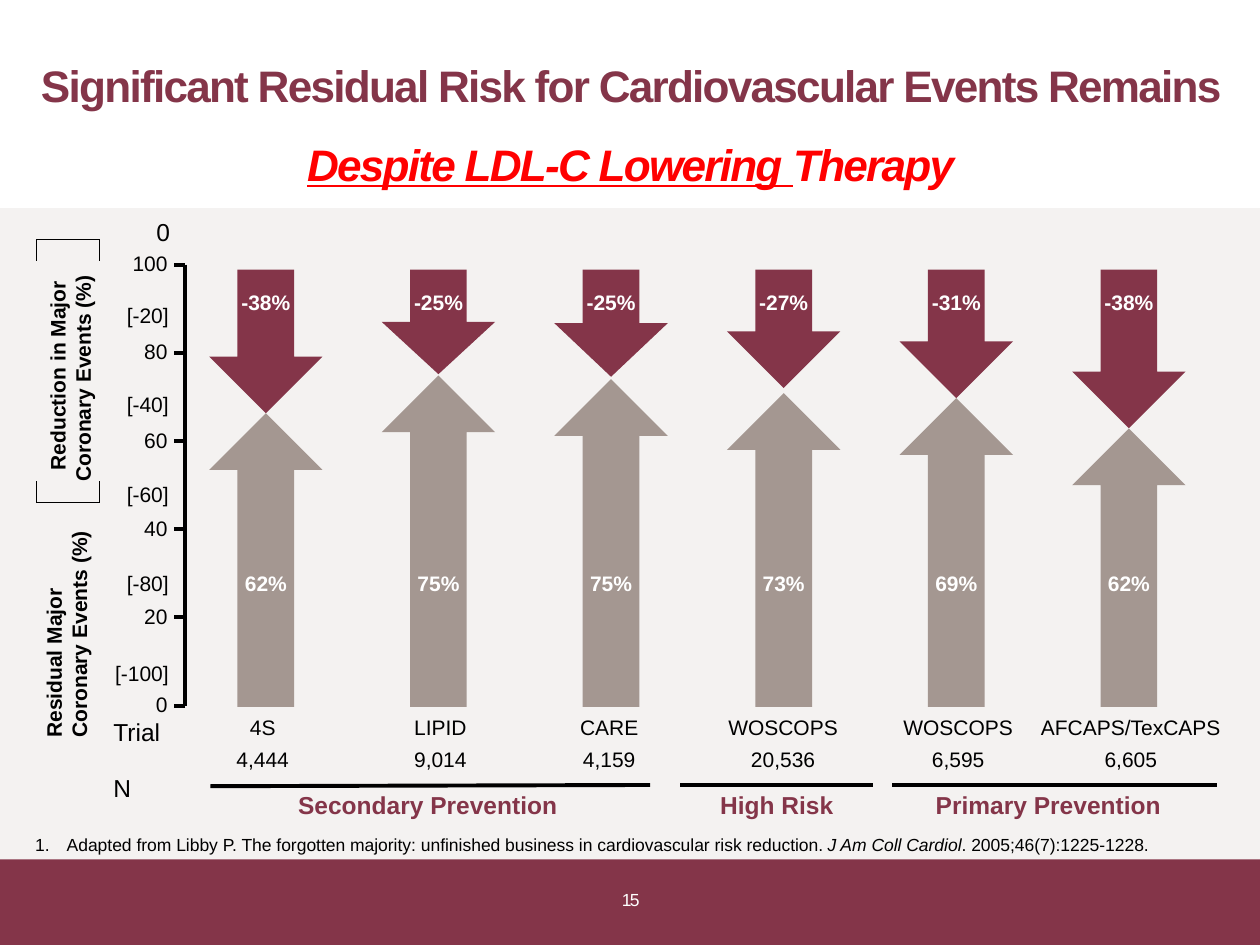
from lxml import etree
from pptx import Presentation
from pptx.dml.color import RGBColor
from pptx.enum import shapes, text
from pptx.oxml.ns import qn
from pptx.util import Inches, Pt

WINE = RGBColor(0x84, 0x35, 0x49)
TAUPE = RGBColor(0xA4, 0x97, 0x91)
PAPER = RGBColor(0xF4, 0xF2, 0xF1)
RED = RGBColor(0xFF, 0, 0)
WHITE = RGBColor(0xFF, 0xFF, 0xFF)
BLACK = RGBColor(0, 0, 0)
LEFT, CENTER, RIGHT = text.PP_ALIGN.LEFT, text.PP_ALIGN.CENTER, text.PP_ALIGN.RIGHT
TOP, MIDDLE, BOTTOM = text.MSO_ANCHOR.TOP, text.MSO_ANCHOR.MIDDLE, text.MSO_ANCHOR.BOTTOM

# Content
TITLE = [("Significant Residual Risk for Cardiovascular Events Remains ", WINE, False),
         ("Despite LDL-C Lowering ", RED, True),
         ("Therapy", RED, False)]
# trial, N, reduction, residual, down arrow height, up arrow top, label centre
TRIALS = [
    ("4S", "4,444", "-38%", "62%", 1.14, 3.28, 2.08),
    ("LIPID", "9,014", "-25%", "75%", 0.83, 2.98, 3.49),
    ("CARE", "4,159", "-25%", "75%", 0.85, 3.01, 4.83),
    ("WOSCOPS", "20,536", "-27%", "73%", 0.94, 3.12, 6.21),
    ("WOSCOPS", "6,595", "-31%", "69%", 1.02, 3.16, 7.6),
    ("AFCAPS/TexCAPS", "6,605", "-38%", "62%", 1.26, 3.4, 8.97),
]
# name, text left, text width, rule start, rule end
PREVENTION = [
    ("Secondary Prevention", 1.54, 3.71, (1.67, 6.24), (5.16, 6.23)),
    ("High Risk", 5.66, 1.01, (5.4, 6.23), (6.93, 6.23)),
    ("Primary Prevention", 7.03, 2.58, (7.08, 6.23), (9.66, 6.23)),
]
RESIDUAL_SCALE = [100, 80, 60, 40, 20, 0]
REDUCTION_SCALE = ["[-20]", "[-40]", "[-60]", "[-80]", "[-100]"]
CITATION = [("Adapted from Libby P. The forgotten majority: unfinished business in "
             "cardiovascular risk reduction.", False),
            (" J Am Coll Cardiol", True),
            (". 2005;46(7):1225-1228.", False)]

# Layout
AXIS_X, AXIS_TOP, AXIS_BOTTOM = 1.47, 2.1, 5.6
ARROW_LEFT, ARROW_STEP, ARROW_WIDTH = 1.66, 1.37, 0.9
ARROW_TOP, ARROW_BOTTOM = 2.14, 5.61

prs = Presentation()
prs.slide_width, prs.slide_height = Inches(10), Inches(7.5)
slide = prs.slides.add_slide(prs.slide_layouts[5])
slide.background.fill.solid()
slide.background.fill.fore_color.rgb = PAPER


def add_run(paragraph, words, size, color=BLACK, bold=False, italic=False, spacing=None):
    run = paragraph.add_run()
    run.text = words
    font = run.font
    font.name, font.size, font.bold, font.italic = "Arial", Pt(size), bold, italic
    font.color.rgb = color
    if spacing is not None:
        run._r.get_or_add_rPr().set("spc", str(spacing))
    return run


def set_frame(frame, anchor=TOP, wrap=True, insets=(0, 0, 0, 0)):
    frame.margin_left, frame.margin_top, frame.margin_right, frame.margin_bottom = map(Inches, insets)
    frame.vertical_anchor = anchor
    frame.word_wrap = wrap
    frame.auto_size = text.MSO_AUTO_SIZE.NONE


def add_text(lines, left, top, width, height, size=12, color=BLACK, bold=False,
             align=CENTER, anchor=MIDDLE, wrap=True, spacing=None):
    box = slide.shapes.add_textbox(*map(Inches, (left, top, width, height)))
    frame = box.text_frame
    set_frame(frame, anchor, wrap)
    for i, line in enumerate(lines):
        paragraph = frame.paragraphs[0] if i == 0 else frame.add_paragraph()
        paragraph.alignment = align
        add_run(paragraph, line, size, color, bold, spacing=spacing)
    return box


def add_block(kind, left, top, width, height, color):
    block = slide.shapes.add_shape(kind, *map(Inches, (left, top, width, height)))
    block.shadow.inherit = False
    block.fill.solid()
    block.fill.fore_color.rgb = color
    block.line.fill.background()


def add_line(start, end, width=2.25):
    line = slide.shapes.add_connector(shapes.MSO_CONNECTOR.STRAIGHT,
                                      *map(Inches, (*start, *end)))
    line.line.color.rgb = BLACK
    line.line.width = Pt(width)
    etree.SubElement(line._element.spPr, qn("a:effectLst"))


# Header and footer bands
add_block(shapes.MSO_SHAPE.RECTANGLE, 0, 6.82, 10, 0.68, WINE)
add_block(shapes.MSO_SHAPE.RECTANGLE, 0, 0, 10, 1.65, WHITE)

# Title, brought in front of the bands
title = slide.shapes.title
title.element.getparent().append(title.element)
title.left, title.top, title.width, title.height = map(Inches, (0.27, 0.25, 9.47, 1.25))
set_frame(title.text_frame)
headline = title.text_frame.paragraphs[0]
headline.alignment, headline.line_spacing = CENTER, 1.5
for i, (words, color, stressed) in enumerate(TITLE):
    run = add_run(headline, words, 25.2, color, True, stressed or i == 2, spacing=-100)
    run.font.underline = stressed

# Axis with ticks and both scales
add_line((AXIS_X, AXIS_TOP), (AXIS_X, AXIS_BOTTOM))
for value in RESIDUAL_SCALE:
    y = AXIS_BOTTOM - (AXIS_BOTTOM - AXIS_TOP) * value / 100
    add_line((AXIS_X, y), (AXIS_X - 0.09, y))
    add_text([str(value)], 0.89, y - 0.11, 0.44, 0.2, align=RIGHT)
add_text(["0"], 1.05, 1.72, 0.3, 0.24, size=14, align=RIGHT)
for i, label in enumerate(REDUCTION_SCALE):
    add_text([label], 0.84, 2.4 + 0.71 * i, 0.5, 0.2, align=RIGHT)

# Axis titles and the bracket around the upper one
for lines, left, top, width, align in [
        (["Reduction in Major ", "Coronary Events (%)"], -0.28, 2.82, 1.67, RIGHT),
        (["Residual Major", "Coronary Events (%)"], -0.3, 4.83, 1.65, LEFT)]:
    axis_title = add_text(lines, left, top, width, 0.4, bold=True, align=align,
                          anchor=BOTTOM, wrap=False)
    axis_title.rotation = 270
for y, tip in [(1.9, 2.07), (3.99, 3.82)]:
    add_line((0.29, y), (0.79, y), 0.75)
    for x in (0.29, 0.79):
        add_line((x, y), (x, tip), 0.75)

# Arrows and labels of each trial
for i, (trial, n, reduction, residual, drop, up_top, center) in enumerate(TRIALS):
    left = ARROW_LEFT + ARROW_STEP * i
    add_block(shapes.MSO_SHAPE.UP_ARROW, left, up_top, ARROW_WIDTH, ARROW_BOTTOM - up_top, TAUPE)
    add_block(shapes.MSO_SHAPE.DOWN_ARROW, left, ARROW_TOP, ARROW_WIDTH, drop, WINE)
    for share, top in [(reduction, 2.3), (residual, 4.53)]:
        add_text([share], left + 0.11, top, 0.68, 0.2, color=WHITE, bold=True)
    column = add_text([trial, n], center - 0.72, 5.67, 1.45, 0.46, anchor=TOP, wrap=False)
    for paragraph in column.text_frame.paragraphs:
        paragraph.space_after = Pt(4)

# Row headings
headings = add_text(["Trial", "N"], 0.9, 5.71, 0.37, 0.67, size=14, align=LEFT,
                    anchor=TOP, wrap=False)
for paragraph in headings.text_frame.paragraphs:
    paragraph.line_spacing = 0.95
headings.text_frame.paragraphs[1].space_before = Pt(16)

# Prevention groups
for name, left, width, start, end in PREVENTION:
    add_line(start, end)
    add_text([name], left, 6.27, width, 0.24, size=14, color=WINE, bold=True, anchor=TOP)

# Slide number and citation
add_text(["15"], 4.13, 6.82, 1.75, 0.4, size=10, color=WHITE, anchor=BOTTOM, spacing=-100)
citation = slide.shapes.add_textbox(*map(Inches, (0.28, 6.57, 9.4, 0.27)))
set_frame(citation.text_frame, insets=(0, 0.05, 0.1, 0.05))
reference = citation.text_frame.paragraphs[0]
properties = reference._p.get_or_add_pPr()
properties.set("marL", str(Inches(0.25)))
properties.set("indent", str(Inches(-0.25)))
etree.SubElement(properties, qn("a:buAutoNum"), type="arabicPeriod")
for words, italic in CITATION:
    add_run(reference, words, 10, italic=italic)

prs.save("out.pptx")
